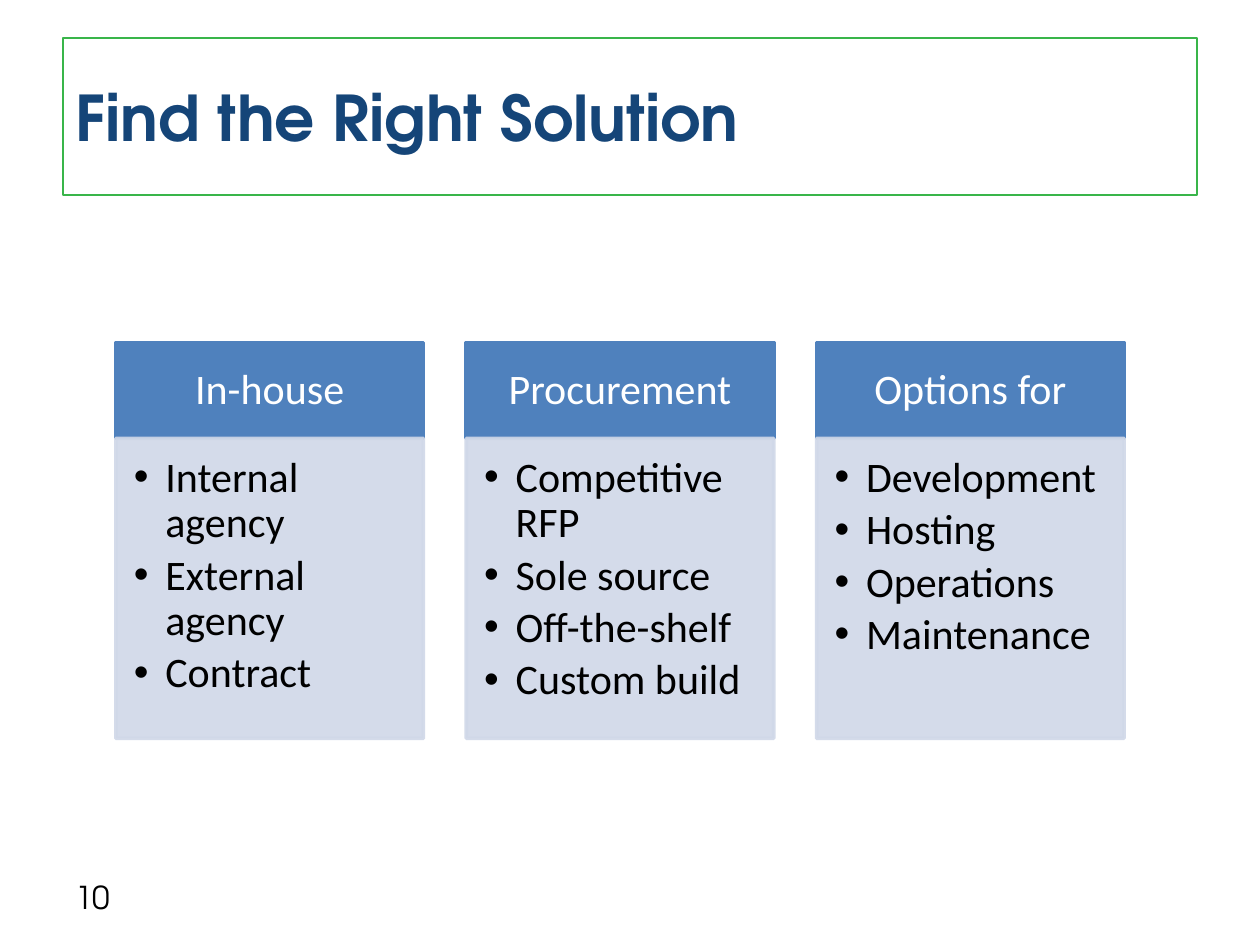
from lxml.etree import SubElement
from pptx import Presentation
from pptx.dml.color import RGBColor
from pptx.enum.shapes import MSO_SHAPE
from pptx.enum.text import MSO_ANCHOR, PP_ALIGN
from pptx.oxml.ns import qn
from pptx.util import Pt

COLORS = {
    "title": "154578",
    "frame": "39B54A",
    "header": "4F81BD",
    "body": "D0D8E8",
    "white": "FFFFFF",
    "black": "000000",
}
HEADING_FONT = "TeX Gyre Adventor"
BODY_FONT = "Calibri"

COLUMNS = [
    ("In-house", ["Internal agency", "External agency", "Contract"]),
    ("Procurement", ["Competitive RFP", "Sole source", "Off-the-shelf", "Custom build"]),
    ("Options for", ["Development", "Hosting", "Operations", "Maintenance"]),
]
COLUMN_LEFT, COLUMN_WIDTH, COLUMN_STEP = 66.25, 175.75, 200.2
HEADER_TOP, HEADER_HEIGHT, BODY_HEIGHT = 195.75, 54.75, 171.5


def color(name):
    return RGBColor.from_string(COLORS[name])


def set_opacity(fill_format, percent):
    """Make the solid color that was just set partly transparent."""
    for rgb in fill_format.iter(qn("a:srgbClr")):
        SubElement(rgb, qn("a:alpha")).set("val", str(percent * 1000))


def add_bullet(para, indent=18):
    properties = para._p.get_or_add_pPr()
    properties.set("marL", str(Pt(indent)))
    properties.set("indent", str(-Pt(indent)))
    SubElement(properties, qn("a:buFont")).set("typeface", "Arial")
    SubElement(properties, qn("a:buChar")).set("char", "•")


def write_text(box, lines, font=BODY_FONT, size=24, ink="black", bold=False,
               align=PP_ALIGN.LEFT, anchor=MSO_ANCHOR.MIDDLE,
               margins=(7.2, 3.6, 7.2, 3.6), line_spacing=1.0,
               space_after=0, bullets=False):
    """Fill a shape with one paragraph per line; margins run left, top, right, bottom."""
    frame = box.text_frame
    frame.word_wrap = True
    frame.vertical_anchor = anchor
    (frame.margin_left, frame.margin_top,
     frame.margin_right, frame.margin_bottom) = map(Pt, margins)
    for index, line in enumerate(lines):
        para = frame.add_paragraph() if index else frame.paragraphs[0]
        para.alignment = align
        para.line_spacing = line_spacing
        para.space_after = Pt(space_after)
        if bullets:
            add_bullet(para)
        span = para.add_run()
        span.text = line
        span.font.name = font
        span.font.size = Pt(size)
        span.font.bold = bold
        span.font.color.rgb = color(ink)


def add_box(page, left, top, width, height, fill=None, line=None, line_width=2, opacity=100):
    box = page.shapes.add_shape(MSO_SHAPE.RECTANGLE, *map(Pt, (left, top, width, height)))
    box.shadow.inherit = False
    if fill:
        box.fill.solid()
        box.fill.fore_color.rgb = color(fill)
    else:
        box.fill.background()
    box.line.color.rgb = color(line or fill)
    box.line.width = Pt(line_width)
    if opacity < 100:
        set_opacity(box._element.spPr, opacity)
    return box


def add_title(page, text):
    box = add_box(page, 36, 21.6, 648, 90, line="frame", line_width=1)
    write_text(box, [text], font=HEADING_FONT, size=36, ink="title", bold=True)


def add_page_number(page, number):
    box = page.shapes.add_textbox(Pt(36), Pt(498.25), Pt(168), Pt(28.75))
    write_text(box, [number], font=HEADING_FONT, size=18)


def add_column(page, left, heading, items):
    header = add_box(page, left, HEADER_TOP, COLUMN_WIDTH, HEADER_HEIGHT, fill="header")
    write_text(header, [heading], ink="white", align=PP_ALIGN.CENTER,
               margins=(13.5, 7.75, 13.5, 7.75), line_spacing=0.9)
    body = add_box(page, left, HEADER_TOP + HEADER_HEIGHT, COLUMN_WIDTH, BODY_HEIGHT,
                   fill="body", opacity=90)
    write_text(body, items, anchor=MSO_ANCHOR.TOP, margins=(10.25, 10.25, 13.5, 15.25),
               line_spacing=0.9, space_after=4, bullets=True)


def main():
    deck = Presentation()
    deck.slide_width, deck.slide_height = Pt(720), Pt(540)
    page = deck.slides.add_slide(deck.slide_layouts[6])
    add_page_number(page, "10")
    add_title(page, "Find the Right Solution")
    for index, (heading, items) in enumerate(COLUMNS):
        add_column(page, COLUMN_LEFT + index * COLUMN_STEP, heading, items)
    deck.save("out.pptx")


if __name__ == "__main__":
    main()
